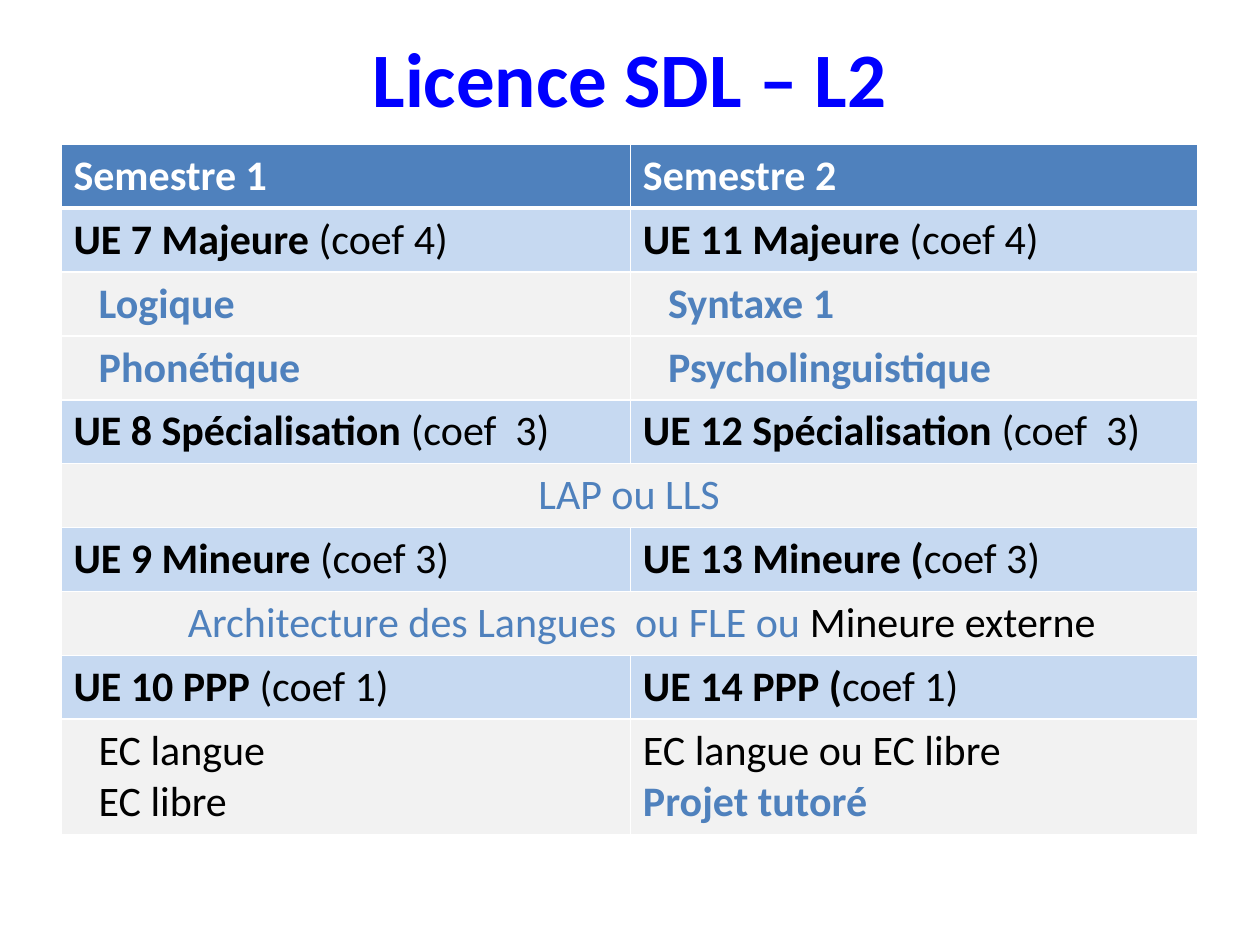
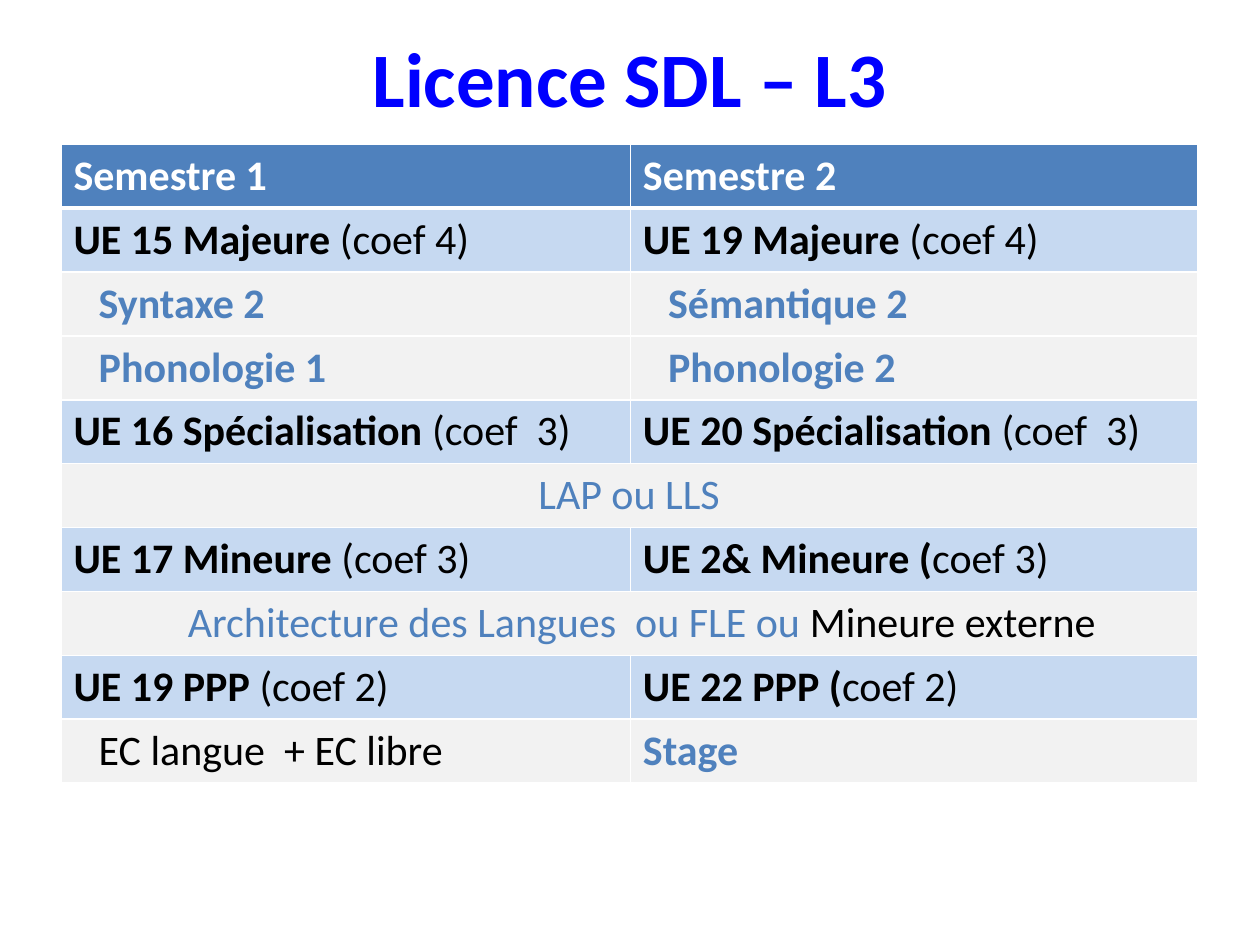
"""Build two slides listing the course units of the SDL degree, years L2 and L3."""
from lxml import etree
from pptx import Presentation
from pptx.dml.color import RGBColor
from pptx.enum.text import MSO_ANCHOR, PP_ALIGN
from pptx.oxml.ns import qn
from pptx.util import Pt

CENTER = PP_ALIGN.CENTER
MIDDLE = MSO_ANCHOR.MIDDLE
FONT = "Calibri"
COLORS = {"title": "0000FF", "blue": "4F81BD", "unit_fill": "C6D9F1",
          "detail_fill": "F2F2F2", "black": "000000", "white": "FFFFFF"}
RUN_STYLES = {"head": ("white", True), "unit": ("black", True), "plain": ("black", False),
              "course": ("blue", True), "option": ("blue", False)}
FILLS = {"head": "blue", "unit": "unit_fill", "detail": "detail_fill",
         "flush": "detail_fill", "shared": "detail_fill"}

HEADER = ("head", [[("Semestre 1", "head")]], [[("Semestre 2", "head")]])
SPECIALISATIONS = ("shared", [[("LAP ou LLS", "option")]])
MINORS = ("shared", [[("Architecture des Langues  ou FLE ou ", "option"),
                      ("Mineure externe", "plain")]])


def units(left, left_coef, right, right_coef):
    return ("unit", [[(left, "unit"), (left_coef, "plain")]],
            [[(right, "unit"), (right_coef, "plain")]])


def courses(left, right):
    return "detail", [[(left, "course")]], [[(right, "course")]]


YEARS = [
    ("Licence SDL – L2", [
        HEADER,
        units("UE 7 Majeure ", "(coef 4)", "UE 11 Majeure ", "(coef 4)"),
        courses("Logique", "Syntaxe 1"),
        courses("Phonétique", "Psycholinguistique"),
        units("UE 8 Spécialisation ", "(coef  3)", "UE 12 Spécialisation ", "(coef  3)"),
        SPECIALISATIONS,
        units("UE 9 Mineure ", "(coef 3)", "UE 13 Mineure (", "coef 3)"),
        MINORS,
        units("UE 10 PPP ", "(coef 1)", "UE 14 PPP (", "coef 1)"),
        ("flush", [[("EC langue", "plain")], [("EC libre", "plain")]],
         [[("EC langue ou EC libre", "plain")], [("Projet tutoré", "course")]]),
    ]),
    ("Licence SDL – L3", [
        HEADER,
        units("UE 15 Majeure ", "(coef 4)", "UE 19 Majeure ", "(coef 4)"),
        courses("Syntaxe 2", "Sémantique 2"),
        courses("Phonologie 1", "Phonologie 2"),
        units("UE 16 Spécialisation ", "(coef  3)", "UE 20 Spécialisation ", "(coef  3)"),
        SPECIALISATIONS,
        units("UE 17 Mineure ", "(coef 3)", "UE 2& Mineure (", "coef 3)"),
        MINORS,
        units("UE 19 PPP ", "(coef 2)", "UE 22 PPP (", "coef 2)"),
        ("flush", [[("EC langue  + EC libre", "plain")]], [[("Stage", "course")]]),
    ]),
]

TITLE_BOX = (36, 7.2, 648, 72.7)
TABLE_LEFT, TABLE_TOP = 34.8, 82.4
COL_WIDTHS = (325.4, 324)
LINE_HEIGHT, CELL_PADDING = 29.3, 7.2
INDENT = 14.4


def add_run(p, text, color, bold, size):
    r = p.add_run()
    r.text = text
    r.font.name, r.font.size, r.font.bold = FONT, Pt(size), bold
    r.font.color.rgb = RGBColor.from_string(COLORS[color])


def set_borders(cell, widths):
    tcPr = cell._tc.get_or_add_tcPr()
    for i, (side, width) in enumerate(widths.items()):
        ln = etree.Element(qn(f"a:ln{side}"), w=str(Pt(width)))
        fill = etree.SubElement(ln, qn("a:solidFill"))
        etree.SubElement(fill, qn("a:srgbClr"), val=COLORS["white"])
        tcPr.insert(i, ln)


def fill_cell(cell, paragraphs, kind, indented):
    tf = cell.text_frame
    for i, runs in enumerate(paragraphs):
        p = tf.add_paragraph() if i else tf.paragraphs[0]
        if kind == "shared":
            p.alignment = CENTER
        if indented:
            p._p.get_or_add_pPr().set("marL", str(Pt(INDENT)))
        for text, style in runs:
            add_run(p, text, *RUN_STYLES[style], 24)


def add_title(slide, text):
    sp = slide.shapes.title
    sp.left, sp.top, sp.width, sp.height = map(Pt, TITLE_BOX)
    tf = sp.text_frame
    tf.vertical_anchor = MIDDLE
    p = tf.paragraphs[0]
    p.alignment = CENTER
    add_run(p, text, "title", True, 44)


def add_units_table(slide, rows):
    heights = [CELL_PADDING + LINE_HEIGHT * max(map(len, cells)) for _, *cells in rows]
    table = slide.shapes.add_table(
        len(rows), len(COL_WIDTHS), Pt(TABLE_LEFT), Pt(TABLE_TOP),
        Pt(sum(COL_WIDTHS)), Pt(sum(heights))).table
    table.horz_banding = False
    for col, width in zip(table.columns, COL_WIDTHS):
        col.width = Pt(width)
    for i, (kind, *cells) in enumerate(rows):
        table.rows[i].height = Pt(heights[i])
        if kind == "shared":
            table.cell(i, 0).merge(table.cell(i, 1))
        for j in range(len(COL_WIDTHS)):
            cell = table.cell(i, j)
            set_borders(cell, {"L": 1, "R": 1, "T": 3 if i == 1 else 1, "B": 3 if i == 0 else 1})
            cell.fill.solid()
            cell.fill.fore_color.rgb = RGBColor.from_string(COLORS[FILLS[kind]])
        for j, paragraphs in enumerate(cells):
            indented = (kind == "detail" or (kind == "flush" and j == 0)
                        or (kind == "shared" and len(paragraphs[0]) > 1))
            fill_cell(table.cell(i, j), paragraphs, kind, indented)


def main():
    prs = Presentation()
    prs.slide_width, prs.slide_height = Pt(720), Pt(540)
    for title, rows in YEARS:
        slide = prs.slides.add_slide(prs.slide_layouts[5])
        add_title(slide, title)
        add_units_table(slide, rows)
    prs.save("out.pptx")


if __name__ == "__main__":
    main()
